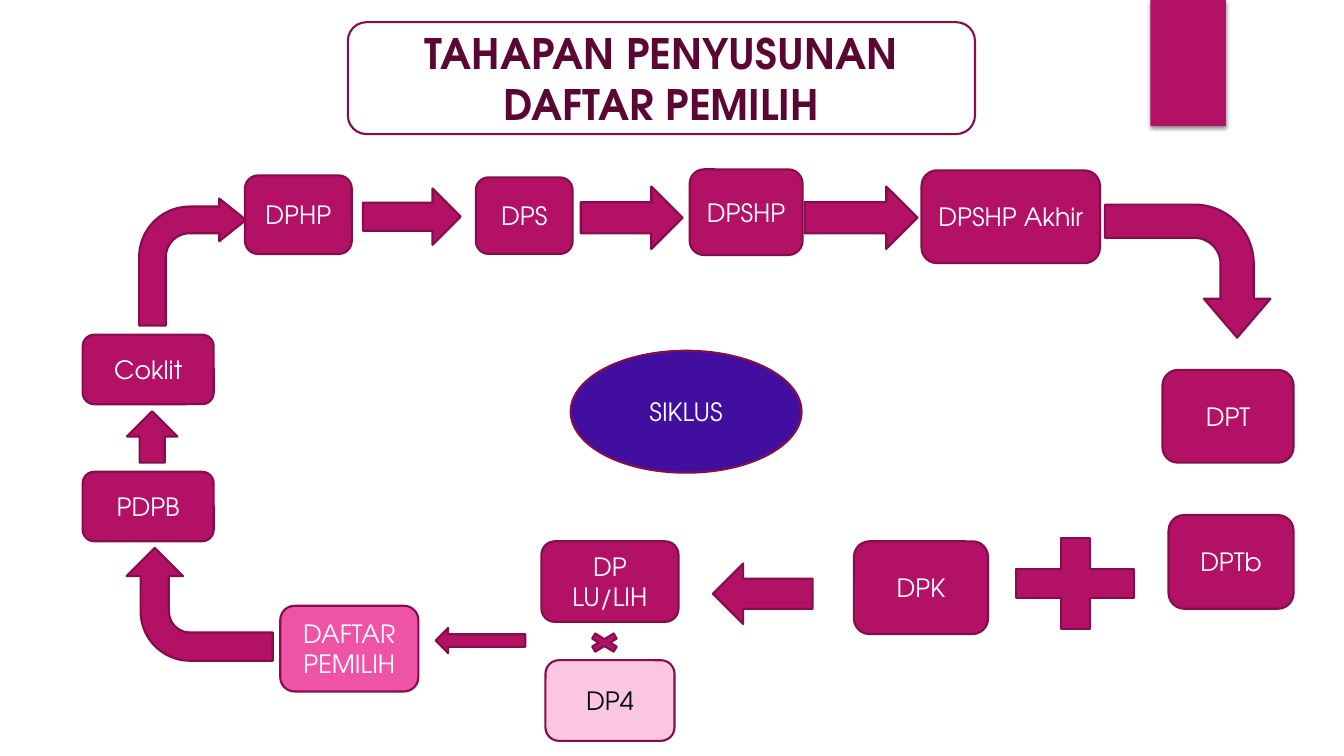
import pptx
import pptx.util
import pptx.dml.color
import pptx.enum.shapes
import pptx.enum.text
import pptx.oxml
import pptx.oxml.ns

Inches = pptx.util.Inches
Pt = pptx.util.Pt
SHAPE = pptx.enum.shapes.MSO_SHAPE

MAGENTA = "B31166"
OUTLINE = "840D4B"
WHITE = "FFFFFF"


def color(hex_string):
    return pptx.dml.color.RGBColor.from_string(hex_string)


class CycleSlide:
    font_name = "TeX Gyre Adventor"

    def __init__(self, slide):
        self.slide = slide

    def shape(self, kind, box, fill=MAGENTA, line=OUTLINE):
        """Draw a preset shape; box is left, top, width, height in inches."""
        shape = self.slide.shapes.add_shape(kind, *map(Inches, box))
        shape.shadow.inherit = False
        if fill:
            shape.fill.solid()
            shape.fill.fore_color.rgb = color(fill)
        else:
            shape.fill.background()
        if line:
            shape.line.color.rgb = color(line)
            shape.line.width = Pt(1.5)
        else:
            shape.line.fill.background()
        return shape

    def label(self, kind, box, text, fill=MAGENTA, ink=WHITE, size=18, bold=False):
        """Draw a shape with centred text, one paragraph per line of text."""
        frame = self.shape(kind, box, fill).text_frame
        frame.word_wrap = True
        frame.vertical_anchor = pptx.enum.text.MSO_ANCHOR.MIDDLE
        frame.text = text
        for paragraph in frame.paragraphs:
            paragraph.alignment = pptx.enum.text.PP_ALIGN.CENTER
            paragraph.font.name = self.font_name
            paragraph.font.size = Pt(size)
            paragraph.font.bold = bold
            paragraph.font.color.rgb = color(ink)

    def stage(self, text, box, fill=MAGENTA, ink=WHITE):
        self.label(SHAPE.ROUNDED_RECTANGLE, box, text, fill, ink)

    def bent_arrow(self, box, rotation=0, adjustments=()):
        arrow = self.shape(SHAPE.BENT_ARROW, box)
        arrow.rotation = rotation
        for index, value in enumerate(adjustments):
            arrow.adjustments[index] = value

    def ribbon(self, box):
        """Draw the top tab with its soft drop shadow."""
        tab = self.shape(SHAPE.RECTANGLE, box, line=None)
        effects = tab._element.spPr.find(pptx.oxml.ns.qn("a:effectLst"))
        effects.append(pptx.oxml.parse_xml(
            f'<a:outerShdw {pptx.oxml.ns.nsdecls("a")} blurRad="{Pt(3)}" '
            f'dist="{Pt(2)}" dir="5400000" rotWithShape="0">'
            '<a:srgbClr val="000000"><a:alpha val="45000"/></a:srgbClr>'
            '</a:outerShdw>'))


STAGES = [
    ("DPHP", (2.43, 1.74, 1.06, 0.78)),
    ("DPS", (4.72, 1.76, 0.96, 0.76)),
    ("DPSHP", (6.84, 1.68, 1.12, 0.85)),
    ("DPSHP Akhir", (9.14, 1.69, 1.77, 0.92)),
    ("DPT", (11.53, 3.67, 1.3, 0.92)),
    ("DPTb", (11.59, 5.11, 1.24, 0.93)),
    ("DPK", (8.47, 5.37, 1.33, 0.92)),
    ("DP LU/LIH", (5.37, 5.37, 1.36, 0.8)),
    ("DP4", (5.41, 6.55, 1.28, 0.8), "FAC6E1", "000000"),
    ("DAFTAR PEMILIH", (2.78, 6.01, 1.37, 0.85), "EF53A5"),
    ("PDPB", (0.82, 4.68, 1.3, 0.69)),
    ("Coklit", (0.82, 3.32, 1.3, 0.69)),
]

LINKS = [
    (SHAPE.RIGHT_ARROW, (3.6, 1.87, 0.97, 0.56)),
    (SHAPE.RIGHT_ARROW, (5.76, 1.85, 1.01, 0.62)),
    (SHAPE.RIGHT_ARROW, (7.98, 1.85, 1.12, 0.62)),
    (SHAPE.MATH_PLUS, (9.87, 5.18, 1.59, 1.22)),
    (SHAPE.LEFT_ARROW, (7.07, 5.59, 0.99, 0.6)),
    (SHAPE.MATH_MULTIPLY, (5.79, 6.25, 0.41, 0.25)),
    (SHAPE.LEFT_ARROW, (4.32, 6.23, 0.89, 0.25)),
    (SHAPE.UP_ARROW, (1.26, 4.08, 0.5, 0.51)),
]


def main():
    deck = pptx.Presentation()
    deck.slide_width = Inches(13.33)
    deck.slide_height = Inches(7.5)
    cycle = CycleSlide(deck.slides.add_slide(deck.slide_layouts[6]))

    cycle.ribbon((11.41, 0, 0.75, 1.25))
    cycle.label(SHAPE.ROUNDED_RECTANGLE, (3.45, 0.22, 6.22, 1.11),
                "TAHAPAN PENYUSUNAN\nDAFTAR PEMILIH",
                fill=None, ink="5A0833", size=30, bold=True)
    cycle.bent_arrow((1.38, 1.97, 1.06, 1.26),
                     adjustments=(0.25, 0.2, 0.25, 0.475))
    cycle.bent_arrow((11.12, 1.87, 1.32, 1.64), rotation=90,
                     adjustments=(0.25, 0.25, 0.292, 0.445))
    cycle.bent_arrow((1.42, 5.27, 1.12, 1.45), rotation=270)
    for kind, box in LINKS:
        cycle.shape(kind, box)
    for stage in STAGES:
        cycle.stage(*stage)
    cycle.label(SHAPE.OVAL, (5.66, 3.48, 2.29, 1.21), "SIKLUS", fill="420EA0")

    deck.save("out.pptx")


if __name__ == "__main__":
    main()
